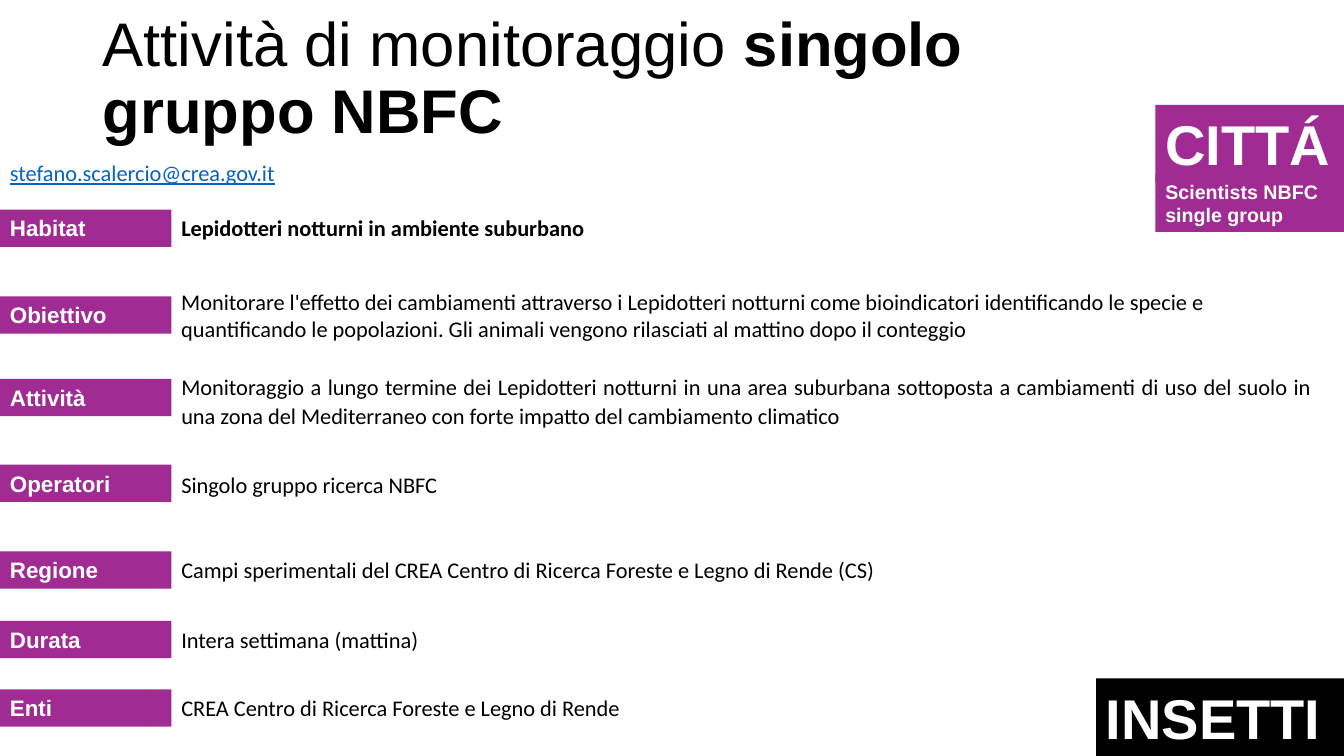
from pptx import Presentation
from pptx.dml.color import RGBColor as RGB
from pptx.enum.shapes import MSO_SHAPE as Shape
from pptx.enum.text import MSO_ANCHOR as Anchor, MSO_AUTO_SIZE as Auto, PP_ALIGN as Align
from pptx.util import Inches, Pt

WIDE, HIGH = Inches(13.33), Inches(7.5)
PURPLE, BLACK, WHITE, BLUE = "A02B93", "000000", "FFFFFF", "0563C1"
LABEL, LINE, GAP = 12.75, 4.93, 1.7
ROWS = [
    ("Habitat", 27.73, "Lepidotteri notturni in ambiente suburbano", {"bold": True}),
    ("Obiettivo", 39.2, "Monitorare l'effetto dei cambiamenti attraverso i Lepidotteri notturni "
     "come bioindicatori identificando le specie e quantificando le popolazioni. "
     "Gli animali vengono rilasciati al mattino dopo il conteggio",
     {"rise": GAP, "wide": 83.5, "high": 8.53}),
    ("Attività", 50.13, "Monitoraggio a lungo termine dei Lepidotteri notturni in una area "
     "suburbana sottoposta a cambiamenti di uso del suolo in una zona del Mediterraneo "
     "con forte impatto del cambiamento climatico",
     {"rise": GAP, "high": 13.2, "align": Align.JUSTIFY, "space": 1.07}),
    ("Operatori", 61.47, "Singolo gruppo ricerca NBFC", {"align": Align.JUSTIFY, "space": 1.07}),
    ("Regione", 72.93, "Campi sperimentali del CREA Centro di Ricerca Foreste e Legno di Rende (CS)", {}),
    ("Durata", 82.13, "Intera settimana (mattina)", {}),
    ("Enti", 91.2, "CREA Centro di Ricerca Foreste e Legno di Rende", {}),
]


def color(code):
    """Turn a hex string into a colour."""
    return RGB.from_string(code)


def place(box):
    """Turn a box in percent of the slide into lengths."""
    x, y, w, h = box
    return [int(part * side / 100) for part, side in zip((x, y, w, h), (WIDE, HIGH) * 2)]


def write(frame, text, size=16, font="Calibri", ink=BLACK, bold=False, under=None,
          align=Align.LEFT, space=None):
    """Add a formatted run to the first paragraph of a frame."""
    frame.word_wrap = True
    para = frame.paragraphs[0]
    para.alignment = align
    para.line_spacing = space
    run = para.add_run()
    run.text = text
    face = run.font
    face.size, face.name, face.bold, face.underline = Pt(size), font, bold, under
    face.color.rgb = color(ink)


def note(slide, box, text, **form):
    """Draw plain text in a box."""
    write(slide.shapes.add_textbox(*place(box)).text_frame, text, **form)


def block(slide, box, text, fill=PURPLE, size=16):
    """Draw a filled block with bold white text."""
    shape = slide.shapes.add_shape(Shape.RECTANGLE, *place(box))
    shape.shadow.inherit = False
    shape.fill.solid()
    shape.fill.fore_color.rgb = color(fill)
    shape.line.fill.background()
    shape.text_frame.vertical_anchor = Anchor.TOP
    write(shape.text_frame, text, size=size, font="Arial", ink=WHITE, bold=True)


def head(slide, box):
    """Fill the title placeholder."""
    title = slide.shapes.title
    title.left, title.top, title.width, title.height = place(box)
    frame = title.text_frame
    frame.auto_size = Auto.NONE
    frame.vertical_anchor = Anchor.MIDDLE
    form = {"size": 44, "font": "Arial", "space": 0.9}
    write(frame, "Attività di monitoraggio ", **form)
    write(frame, "singolo gruppo NBFC", bold=True, **form)


def row(slide, box, label, text, rise=0, wide=85.6, high=LINE, **form):
    """Draw a label block and the text beside it."""
    x, y, w, h = box
    block(slide, box, label)
    note(slide, (x + w, y - rise, wide, high), text, **form)


def badge(slide, box):
    """Draw the two-part badge of the habitat type."""
    x, y, w, h = box
    block(slide, (x, y, w, h * 0.61), "CITTÁ", size=40)
    block(slide, (x, y + h * 0.55, w, h * 0.45), "Scientists NBFC single group", size=14)


def main():
    """Build and save the slide."""
    deck = Presentation()
    deck.slide_width, deck.slide_height = WIDE, HIGH
    slide = deck.slides.add_slide(deck.slide_layouts[5])
    head(slide, (6.9, 0.93, 80.27, 19.33))
    note(slide, (0, 20.13, 70.74, 5.07), "stefano.scalercio@crea.gov.it",
         ink=BLUE, under=True, space=1.07)
    for label, top, text, form in ROWS:
        row(slide, (0, top, LABEL, LINE), label, text, **form)
    badge(slide, (85.97, 13.87, 14.03, 16.8))
    block(slide, (81.55, 89.73, 18.45, 10.27), "INSETTI", fill=BLACK, size=40)
    deck.save("out.pptx")


if __name__ == "__main__":
    main()
